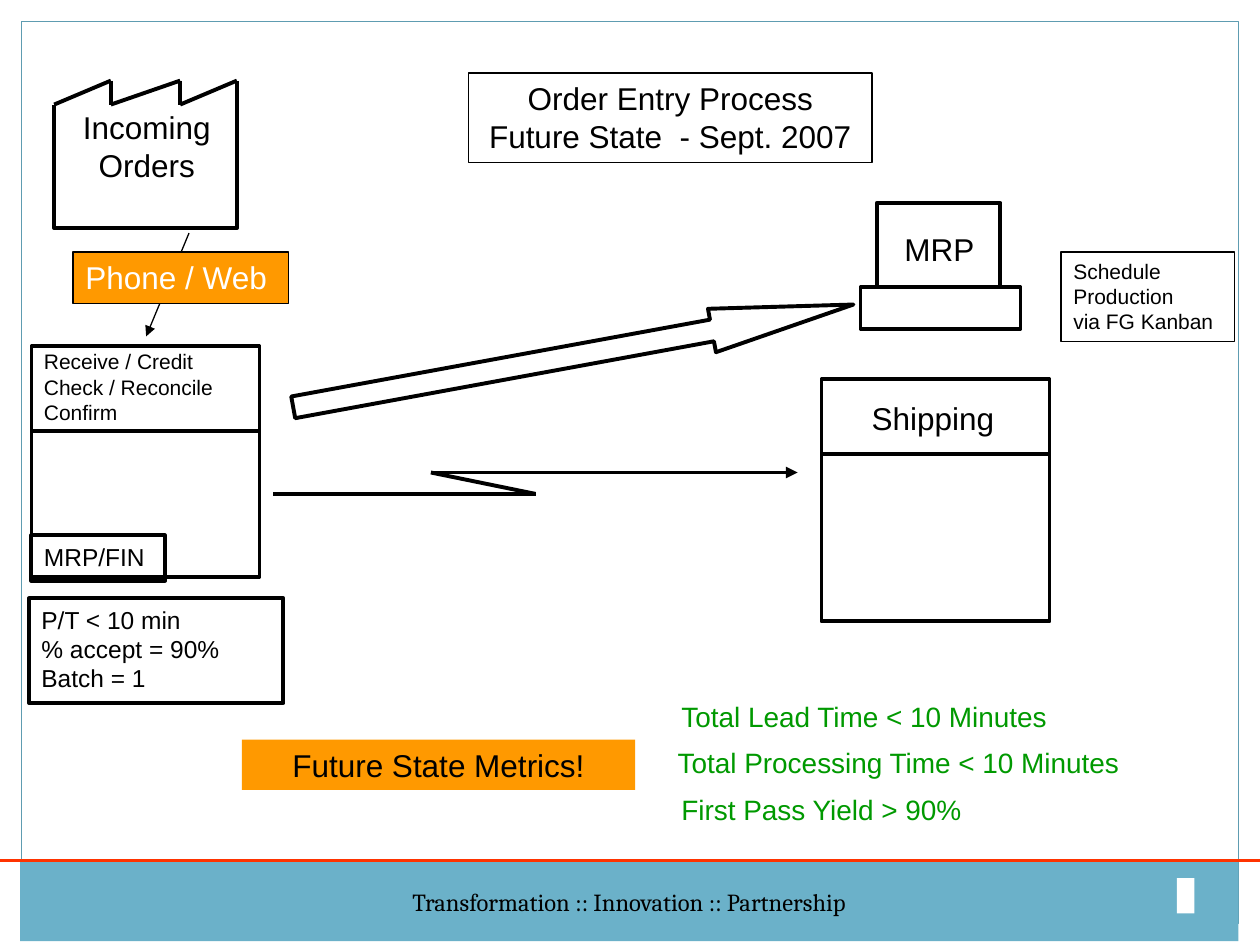
from itertools import pairwise

from lxml import etree
from pptx import Presentation
from pptx.dml.color import RGBColor
from pptx.enum.shapes import MSO_CONNECTOR, MSO_SHAPE
from pptx.enum.text import MSO_ANCHOR, MSO_AUTO_SIZE, PP_ALIGN
from pptx.oxml.ns import qn
from pptx.util import Inches, Pt

BLACK = RGBColor(0x00, 0x00, 0x00)
WHITE = RGBColor(0xFF, 0xFF, 0xFF)
ORANGE = RGBColor(0xFF, 0x99, 0x00)
GREEN = RGBColor(0x00, 0x99, 0x00)
RED = RGBColor(0xFF, 0x33, 0x00)
BLUE = RGBColor(0x6B, 0xB1, 0xC9)
FRAME_BLUE = RGBColor(0x5E, 0x9C, 0xB1)

RECT = MSO_SHAPE.RECTANGLE
RIGHT_ARROW = MSO_SHAPE.RIGHT_ARROW
STRAIGHT = MSO_CONNECTOR.STRAIGHT
LEFT = PP_ALIGN.LEFT
CENTER = PP_ALIGN.CENTER
TOP = MSO_ANCHOR.TOP
MIDDLE = MSO_ANCHOR.MIDDLE
NO_AUTOFIT = MSO_AUTO_SIZE.NONE

THIN, THICK = 0.75, 2.25


def paint(shape, fill=None, line=None, width=THICK):
    """Set fill and outline; None means none."""
    if fill is None:
        shape.fill.background()
    else:
        shape.fill.solid()
        shape.fill.fore_color.rgb = fill
    if line is None:
        shape.line.fill.background()
    else:
        shape.line.color.rgb = line
        shape.line.width = Pt(width)


def write(shape, lines, size, color=BLACK, align=LEFT, font="Arial",
          wrap=True, anchor=TOP):
    """Write one paragraph per line of text."""
    frame = shape.text_frame
    frame.auto_size = NO_AUTOFIT
    frame.word_wrap = wrap
    frame.vertical_anchor = anchor
    for index, line in enumerate(lines):
        para = frame.paragraphs[0] if index == 0 else frame.add_paragraph()
        para.alignment = align
        span = para.add_run()
        span.text = line
        span.font.name = font
        span.font.size = Pt(size)
        span.font.color.rgb = color


def add_block(page, at, fill=None, line=BLACK, width=THICK, kind=RECT):
    block = page.shapes.add_shape(kind, *map(Inches, at))
    block.shadow.inherit = False
    paint(block, fill, line, width)
    return block


def add_label(page, at, lines, size, fill=None, line=None, width=THICK, **style):
    box = page.shapes.add_textbox(*map(Inches, at))
    paint(box, fill, line, width)
    write(box, lines, size, **style)


def add_line(page, start, end, color=BLACK, width=THICK, arrow=False):
    line = page.shapes.add_connector(STRAIGHT, *map(Inches, start + end))
    line.line.color.rgb = color
    line.line.width = Pt(width)
    properties = line._element.spPr
    if arrow:
        outline = properties.find(qn("a:ln"))
        etree.SubElement(outline, qn("a:tailEnd"), type="triangle")
    etree.SubElement(properties, qn("a:effectLst"))


def add_background(page):
    add_block(page, (0.17, 0.17, 9.66, 7.16), line=FRAME_BLUE, width=THIN)
    footer = add_block(page, (0.16, 6.84, 9.67, 0.63), BLUE, line=None)
    write(footer, ["Transformation :: Innovation :: Partnership"], 14,
          align=CENTER, font="Cambria", wrap=False, anchor=MIDDLE)
    add_block(page, (9.34, 6.97, 0.14, 0.28), WHITE, line=None)
    add_line(page, (0, 6.83), (10, 6.83), RED, 2)


def add_title(page):
    title = page.shapes.title
    title.left, title.top, title.width, title.height = map(
        Inches, (3.72, 0.58, 3.2, 0.71))
    paint(title, line=BLACK, width=THIN)
    write(title, ["Order Entry Process", "Future State  - Sept. 2007"], 18,
          align=CENTER, wrap=False)


def add_process(page, left, top, height, header):
    """Process box with a header row."""
    width = 1.81
    add_block(page, (left, top, width, height))
    add_line(page, (left, header), (left + width, header))


def add_factory(page):
    """Factory with a saw-tooth roof."""
    left, right, eave, ridge, floor = 0.43, 1.88, 0.83, 0.64, 1.81
    add_label(page, (0.25, 0.81, 1.83, 0.7), ["Incoming", "Orders"], 18,
              align=CENTER)
    points = [(left, eave), (left, floor), (right, floor), (right, ridge)]
    points = [(Inches(x), Inches(y)) for x, y in points]
    builder = page.shapes.build_freeform(*points[0])
    builder.add_line_segments(points[1:], close=False)
    walls = builder.convert_to_shape()
    walls.shadow.inherit = False
    paint(walls, line=BLACK)
    roof = [(left, eave), (0.88, ridge), (0.88, eave),
            (1.43, ridge), (1.43, eave), (right, ridge)]
    for start, end in pairwise(roof):
        add_line(page, start, end)


def add_information_flow(page):
    """Zigzag arrow for electronic information."""
    add_line(page, (2.17, 3.92), (4.25, 3.92))
    add_line(page, (3.42, 3.75), (4.25, 3.92))
    add_line(page, (3.42, 3.75), (6.33, 3.75), arrow=True)


def add_metrics(page):
    add_label(page, (1.92, 5.87, 3.12, 0.4), ["Future State Metrics!"], 18,
              fill=ORANGE, align=CENTER)
    metrics = [
        (5.31, 3.3, "Total Lead Time < 10 Minutes"),
        (5.28, 3.98, "Total Processing Time < 10 Minutes"),
        (5.31, 2.64, "First Pass Yield > 90%"),
    ]
    for row, (left, width, text) in enumerate(metrics):
        add_label(page, (left, 5.5 + 0.37 * row, width, 0.37), [text], 16,
                  color=GREEN, wrap=False)


def main():
    deck = Presentation()
    deck.slide_width, deck.slide_height = Inches(10), Inches(7.5)
    page = deck.slides.add_slide(deck.slide_layouts[5])
    add_background(page)
    add_title(page)

    # Order entry
    add_process(page, 0.25, 2.75, 1.83, header=3.42)
    add_label(page, (0.25, 2.72, 1.75, 0.7),
              ["Receive / Credit", "Check / Reconcile", "Confirm"], 12)
    add_label(page, (0.25, 4.25, 1.06, 0.36), ["MRP/FIN"], 14, line=BLACK)
    add_label(page, (0.23, 4.75, 2.02, 0.83),
              ["P/T < 10 min", "% accept = 90%", "Batch = 1"], 14, line=BLACK)

    # MRP computer
    add_block(page, (6.96, 1.61, 0.98, 0.67))
    add_block(page, (6.83, 2.28, 1.27, 0.33))
    add_label(page, (7.08, 1.78, 0.76, 0.4), ["MRP"], 18, wrap=False)

    # Incoming orders
    add_line(page, (1.5, 1.85), (1.16, 2.67), width=THIN, arrow=True)
    add_label(page, (0.58, 2, 1.71, 0.41), ["Phone / Web"], 18, fill=ORANGE,
              line=BLACK, width=THIN, color=WHITE)
    add_factory(page)

    # Flows out of order entry
    arrow = add_block(page, (2.29, 2.65, 4.52, 0.35), kind=RIGHT_ARROW)
    arrow.adjustments[0] = 0.5
    arrow.adjustments[1] = 3.26
    arrow.rotation = 349.6
    add_information_flow(page)

    # Scheduling and shipping
    add_label(page, (8.42, 2, 1.38, 0.71),
              ["Schedule", "Production", "via FG Kanban"], 12,
              line=BLACK, width=THIN, wrap=False)
    add_process(page, 6.52, 3.01, 1.92, header=3.6)
    add_label(page, (6.82, 3.12, 1.43, 0.4), ["Shipping"], 18)

    add_metrics(page)
    deck.save("out.pptx")


if __name__ == "__main__":
    main()
